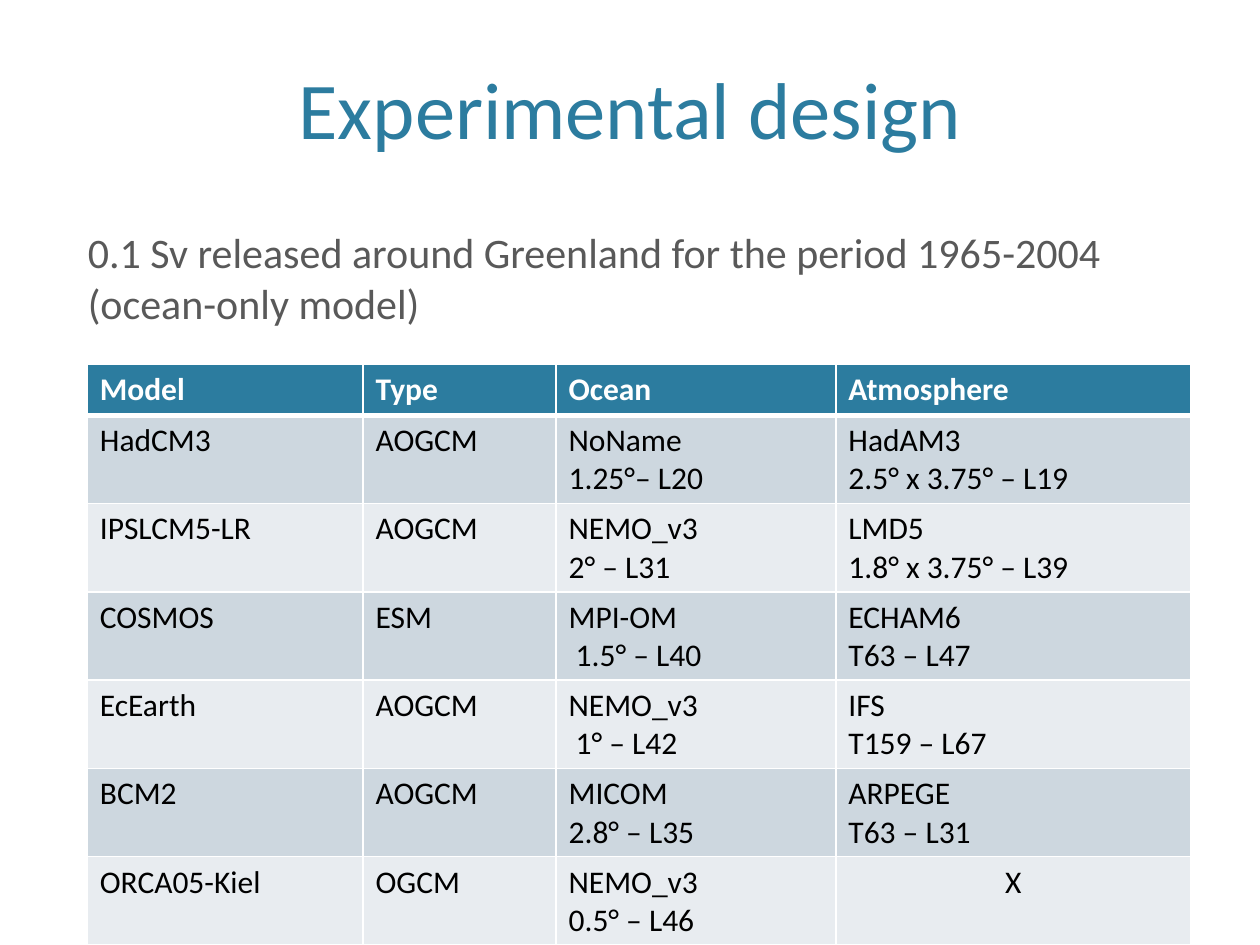
from lxml.etree import SubElement
from pptx import Presentation
from pptx.dml.color import RGBColor
from pptx.enum.text import MSO_ANCHOR, PP_ALIGN
from pptx.oxml.ns import qn
from pptx.util import Cm, Pt

FONT = "Calibri"
TEAL = RGBColor(0x2C, 0x7C, 0x9F)
GREY = RGBColor(0x59, 0x59, 0x59)
BLACK = RGBColor(0, 0, 0)
WHITE = RGBColor(0xFF, 0xFF, 0xFF)
BANDS = RGBColor(0xCD, 0xD7, 0xDF), RGBColor(0xE8, 0xEC, 0xF0)

HEADINGS = ("Model", "Type", "Ocean", "Atmosphere")
MODELS = (
    ("HadCM3", "AOGCM", "NoName\n1.25°– L20", "HadAM3\n2.5° x 3.75° – L19"),
    ("IPSLCM5-LR", "AOGCM", "NEMO_v3\n2° – L31", "LMD5\n1.8° x 3.75° – L39"),
    ("COSMOS", "ESM", "MPI-OM\n 1.5° – L40", "ECHAM6\nT63 – L47"),
    ("EcEarth", "AOGCM", "NEMO_v3\n 1° – L42", "IFS\nT159 – L67"),
    ("BCM2", "AOGCM", "MICOM\n2.8° – L35", "ARPEGE\nT63 – L31"),
    ("ORCA05-Kiel", "OGCM", "NEMO_v3\n0.5° – L46", "X"),
)
COLUMN_WIDTHS = Cm(5.56), Cm(3.89), Cm(5.64), Cm(7.16)
HEADER_HEIGHT, MODEL_HEIGHT = Cm(1.03), Cm(1.78)


def write(frame, text, *, size, color, bold=False, align=PP_ALIGN.LEFT):
    """Fill a text frame, one paragraph for each line of text."""
    frame.word_wrap = True
    frame.text = text
    for paragraph in frame.paragraphs:
        paragraph.alignment = align
        for run in paragraph.runs:
            run.font.name = FONT
            run.font.size = Pt(size)
            run.font.bold = bold
            run.font.color.rgb = color


def add_borders(cell, bottom):
    """Draw white cell borders; bottom is the lower line's width in points."""
    properties = cell._tc.get_or_add_tcPr()
    for side, width in (("L", 1), ("R", 1), ("T", 1), ("B", bottom)):
        line = SubElement(properties, qn(f"a:ln{side}"), w=str(Pt(width)))
        fill = SubElement(line, qn("a:solidFill"))
        SubElement(fill, qn("a:srgbClr"), val=str(WHITE))


def place_title(slide, left, top, width, height):
    title = slide.shapes.title
    title.left, title.top, title.width, title.height = left, top, width, height
    title.text_frame.vertical_anchor = MSO_ANCHOR.BOTTOM
    write(title.text_frame, "Experimental design", size=46, color=TEAL,
          align=PP_ALIGN.CENTER)


def place_summary(slide, left, top, width, height):
    summary = slide.shapes.add_textbox(left, top, width, height)
    write(summary.text_frame,
          "0.1 Sv released around Greenland for the period 1965-2004 "
          "(ocean-only model)", size=24, color=GREY)


def place_models(slide, left, top, width, height):
    rows = (HEADINGS, *MODELS)
    models = slide.shapes.add_table(len(rows), len(HEADINGS),
                                    left, top, width, height).table
    for column, column_width in zip(models.columns, COLUMN_WIDTHS):
        column.width = column_width

    for r, row in enumerate(rows):
        header = r == 0
        models.rows[r].height = HEADER_HEIGHT if header else MODEL_HEIGHT
        for c, text in enumerate(row):
            cell = models.cell(r, c)
            add_borders(cell, bottom=3 if header else 1)
            cell.fill.solid()
            cell.fill.fore_color.rgb = TEAL if header else BANDS[(r - 1) % 2]
            write(cell.text_frame, text, size=18, bold=header,
                  color=WHITE if header else BLACK,
                  align=PP_ALIGN.CENTER if text == "X" else PP_ALIGN.LEFT)


def main():
    deck = Presentation()
    deck.slide_width, deck.slide_height = Cm(25.4), Cm(19.05)
    slide = deck.slides.add_slide(deck.slide_layouts.get_by_name("Title Only"))

    # Title and summary share one column; the table aligns with their text
    place_title(slide, Cm(1.52), Cm(-0.43), Cm(22.35), Cm(3.7))
    place_summary(slide, Cm(1.52), Cm(4.45), Cm(22.35), Cm(12.07))
    place_models(slide, Cm(1.76), Cm(7.34), sum(COLUMN_WIDTHS),
                 HEADER_HEIGHT + len(MODELS) * MODEL_HEIGHT)
    deck.save("out.pptx")


if __name__ == "__main__":
    main()
